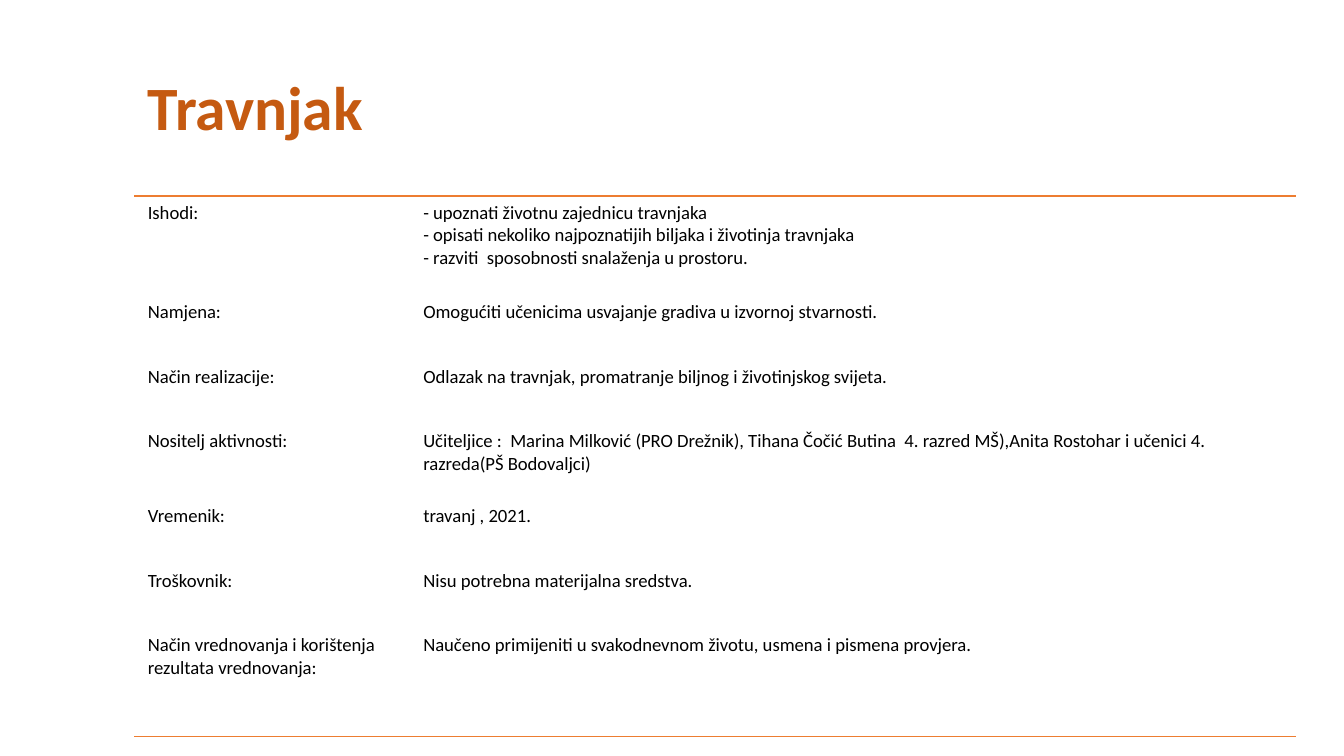
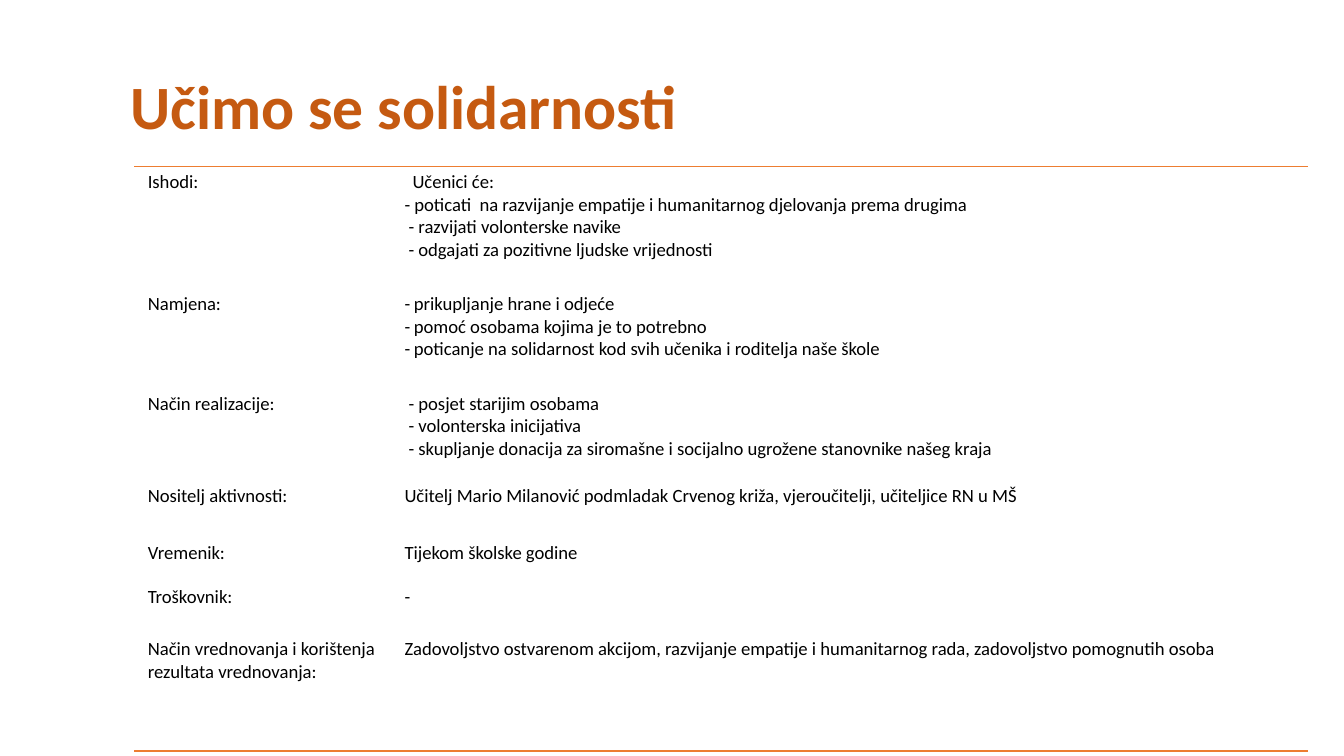
from typing import NamedTuple

from lxml import etree
from pptx import Presentation
from pptx.dml.color import RGBColor
from pptx.enum import text as tx
from pptx.oxml import ns
from pptx.util import Inches, Pt

# Shared look
FONT = "Calibri"
RUST = "C55A11"
LINE = "ED7D31"
INK = "000000"
PLAIN = "{2D5ABB26-0587-4C30-8999-92F81FD0307C}"  # table style without grid
LABELS = (
    "Ishodi:",
    "Namjena:",
    "Način realizacije:",
    "Nositelj aktivnosti:",
    "Vremenik:",
    "Troškovnik:",
    "Način vrednovanja i korištenja rezultata vrednovanja:",
)


class Line(NamedTuple):
    text: str
    left: float = 0
    dash: bool = False


class Row(NamedTuple):
    height: float
    lines: tuple[Line, ...]


class Box(NamedTuple):
    left: float
    top: float
    width: float
    height: float


class Plan(NamedTuple):
    title: str
    head: Box
    top: float
    cols: tuple[float, float]
    pad: float
    rows: tuple[Row, ...]


PLANS = (
    Plan("Travnjak", Box(1, 0.35, 9, 0.94), 1.46, (2.05, 6.59), 0.04, (
        Row(0.74, (
            Line("- upoznati životnu zajednicu travnjaka"),
            Line("- opisati nekoliko najpoznatijih biljaka i životinja travnjaka"),
            Line("- razviti  sposobnosti snalaženja u prostoru."),
        )),
        Row(0.48, (Line("Omogućiti učenicima usvajanje gradiva u izvornoj stvarnosti."),)),
        Row(0.48, (Line("Odlazak na travnjak, promatranje biljnog i životinjskog svijeta."),)),
        Row(0.56, (Line(
            "Učiteljice :  Marina Milković (PRO Drežnik), Tihana Čočić Butina  4. razred MŠ),"
            "Anita Rostohar i učenici 4. razreda(PŠ Bodovaljci)"),)),
        Row(0.48, (Line("travanj , 2021."),)),
        Row(0.48, (Line("Nisu potrebna materijalna sredstva."),)),
        Row(0.8, (Line(
            "Naučeno primijeniti u svakodnevnom životu, usmena i pismena provjera."),)),
    )),
    Plan("Učimo se solidarnosti", Box(0.87, 0.39, 9, 0.85), 1.24, (1.91, 6.82), 0.03, (
        Row(0.91, (
            Line("Učenici će:", 0.06),
            Line("- poticati  na razvijanje empatije i humanitarnog djelovanja prema drugima"),
            Line("- razvijati volonterske navike", 0.03),
            Line("- odgajati za pozitivne ljudske vrijednosti", 0.03),
        )),
        Row(0.74, (
            Line("prikupljanje hrane i odjeće", 0.07, True),
            Line("pomoć osobama kojima je to potrebno", 0.07, True),
            Line("poticanje na solidarnost kod svih učenika i roditelja naše škole", 0.07, True),
        )),
        Row(0.69, (
            Line("- posjet starijim osobama", 0.03),
            Line("- volonterska inicijativa", 0.03),
            Line("- skupljanje donacija za siromašne i socijalno ugrožene stanovnike našeg kraja",
                 0.03),
        )),
        Row(0.42, (Line(
            "Učitelj Mario Milanović podmladak Crvenog križa, vjeroučitelji, "
            "učiteljice RN u MŠ"),)),
        Row(0.33, (Line("Tijekom školske godine"),)),
        Row(0.39, (Line("-"),)),
        Row(0.87, (Line(
            "Zadovoljstvo ostvarenom akcijom, razvijanje empatije i humanitarnog rada, "
            "zadovoljstvo pomognutih osoba"),)),
    )),
)


def rgb(code: str) -> RGBColor:
    return RGBColor.from_string(code)


def style(par, size: float, color: str, bold: bool = False) -> None:
    for run in par.runs:
        font = run.font
        font.name, font.size, font.bold = FONT, Pt(size), bold
        font.color.rgb = rgb(color)


def indent(par, line: Line) -> None:
    props = par._p.get_or_add_pPr()
    props.set("marL", str(Inches(line.left)))
    props.set("indent", str(-Inches(line.left) if line.dash else 0))
    if line.dash:
        etree.SubElement(props, ns.qn("a:buFont")).set("typeface", FONT)
        etree.SubElement(props, ns.qn("a:buChar")).set("char", "-")


def rule(cell, ruled: str) -> None:
    """Draw a coloured line on the ruled side (T or B), none on the others."""
    props = cell._tc.get_or_add_tcPr()
    for spot, side in enumerate("LRTB"):
        edge = etree.Element(ns.qn(f"a:ln{side}"), w=str(Pt(1)))
        if side == ruled:
            fill = etree.SubElement(edge, ns.qn("a:solidFill"))
            etree.SubElement(fill, ns.qn("a:srgbClr")).set("val", LINE)
        else:
            etree.SubElement(edge, ns.qn("a:noFill"))
        props.insert(spot, edge)


def write(cell, lines: tuple[Line, ...], pad: float) -> None:
    cell.fill.background()
    cell.margin_left = cell.margin_right = Inches(0.1)
    cell.margin_top = cell.margin_bottom = Inches(pad)
    frame = cell.text_frame
    frame.text = "\n".join(line.text for line in lines)
    for par, line in zip(frame.paragraphs, lines):
        indent(par, line)
        style(par, 10, INK)


def add_head(slide, plan: Plan) -> None:
    head = slide.shapes.title
    head.left, head.top, head.width, head.height = map(Inches, plan.head)
    frame = head.text_frame
    frame.text = plan.title
    frame.word_wrap = True
    frame.auto_size = tx.MSO_AUTO_SIZE.NONE
    frame.vertical_anchor = tx.MSO_ANCHOR.MIDDLE
    frame.margin_left = frame.margin_right = Inches(0.1)
    frame.margin_top = frame.margin_bottom = Inches(0.1)
    par = frame.paragraphs[0]
    par.alignment = tx.PP_ALIGN.LEFT
    par.line_spacing = 0.9
    style(par, 33, RUST, True)


def add_grid(slide, plan: Plan) -> None:
    tall = sum(row.height for row in plan.rows)
    grid = slide.shapes.add_table(
        len(plan.rows), len(plan.cols), Inches(1), Inches(plan.top),
        Inches(sum(plan.cols)), Inches(tall)).table
    grid.first_row = grid.horz_banding = False
    grid._tbl.tblPr.find(ns.qn("a:tableStyleId")).text = PLAIN
    for col, width in zip(grid.columns, plan.cols):
        col.width = Inches(width)
    for num, (label, row) in enumerate(zip(LABELS, plan.rows)):
        grid.rows[num].height = Inches(row.height)
        write(grid.cell(num, 0), (Line(label),), plan.pad)
        write(grid.cell(num, 1), row.lines, plan.pad)
    # Rules above the first row and below the last
    for num in range(len(plan.cols)):
        rule(grid.cell(0, num), "T")
        rule(grid.cell(len(plan.rows) - 1, num), "B")


def main() -> None:
    deck = Presentation()
    deck.slide_width = Inches(10)
    deck.slide_height = deck.slide_width * 9 // 16
    for plan in PLANS:
        slide = deck.slides.add_slide(deck.slide_layouts[5])
        add_head(slide, plan)
        add_grid(slide, plan)
    deck.save("out.pptx")


if __name__ == "__main__":
    main()
